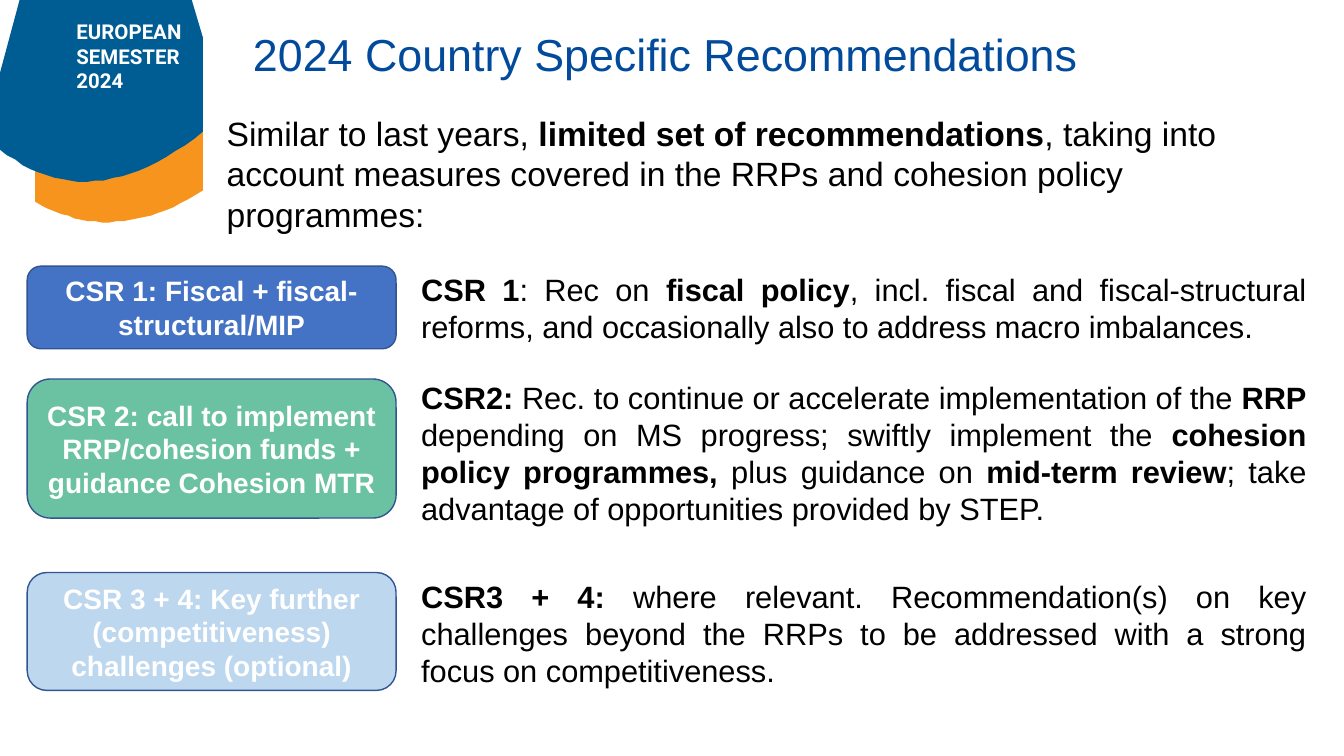
from dataclasses import dataclass

from pptx import Presentation
from pptx.dml.color import RGBColor
from pptx.enum.shapes import MSO_SHAPE
from pptx.enum.text import MSO_ANCHOR, MSO_AUTO_SIZE, PP_ALIGN
from pptx.slide import Slide
from pptx.text.text import _Paragraph
from pptx.util import Pt

Point = tuple[float, float]


@dataclass(frozen=True)
class Theme:
    black: str = "000000"
    white: str = "FFFFFF"
    title_blue: str = "024B9C"
    banner_blue: str = "005D94"
    banner_orange: str = "F7941D"
    outline: str = "325491"
    font: str = "Arial"
    banner_font: str = "Roboto"
    title_size: float = 32
    intro_size: float = 24
    detail_size: float = 22
    label_size: float = 20
    banner_size: float = 14.6


@dataclass(frozen=True)
class Style:
    size: float
    color: str
    font: str = Theme.font


@dataclass(frozen=True)
class Span:
    text: str
    bold: bool = False


@dataclass(frozen=True)
class Banner:
    """Straight-edged outline closed by a curved lower edge."""
    color: str
    upper_edge: list[Point]
    curve: tuple[Point, Point, Point]


@dataclass(frozen=True)
class Recommendation:
    label: str
    fill: str
    label_top: float
    label_height: float
    detail_top: float
    detail: list[Span]


THEME = Theme()
LABEL_LEFT, LABEL_WIDTH = 19.44, 263.52
DETAIL_LEFT, DETAIL_WIDTH, DETAIL_HEIGHT = 293.76, 646.56, 65.52
CURVE_STEPS = 24

BANNERS = [
    Banner(THEME.banner_orange,
           [(145.44, 95), (138.2, 77.8), (36.7, 77.8), (25.2, 110.2)],
           ((25.2, 144), (80.3, 176.7), (145.44, 136.1))),
    Banner(THEME.banner_blue,
           [(145.44, 27.4), (136.8, 0), (13.7, 0), (0, 51.8)],
           ((0, 106.6), (64, 158.5), (145.44, 93.6))),
]

INTRO = [
    Span("Similar to last years, "),
    Span("limited set of recommendations", True),
    Span(", taking into account measures covered in the RRPs and cohesion policy programmes:"),
]

RECOMMENDATIONS = [
    Recommendation("CSR 1: Fiscal + fiscal-structural/MIP", "4472C4", 190.08, 59.04, 190.08, [
        Span("CSR 1", True),
        Span(": Rec on "),
        Span("fiscal policy", True),
        Span(", incl. fiscal and fiscal-structural reforms, and occasionally also "
             "to address macro imbalances."),
    ]),
    Recommendation("CSR 2: call to implement RRP/cohesion funds + guidance Cohesion MTR",
                   "6AC2A3", 270.72, 99.36, 267.12, [
        Span("CSR2: ", True),
        Span("Rec. to continue or accelerate implementation of the "),
        Span("RRP", True),
        Span(" depending on MS progress; swiftly implement the "),
        Span("cohesion policy programmes, ", True),
        Span("plus guidance on "),
        Span("mid-term review", True),
        Span("; take advantage of opportunities provided by STEP."),
    ]),
    Recommendation("CSR 3 + 4: Key further (competitiveness) challenges (optional)",
                   "BDD7EE", 408.96, 84.24, 408.96, [
        Span("CSR3 + 4: ", True),
        Span("where relevant. Recommendation(s) on key challenges beyond the RRPs "
             "to be addressed with a strong focus on competitiveness."),
    ]),
]


def rgb(color: str) -> RGBColor:
    return RGBColor.from_string(color)


def write_spans(para: _Paragraph, spans: list[Span], style: Style,
                align: PP_ALIGN = PP_ALIGN.LEFT) -> None:
    para.alignment = align
    for span in spans:
        run = para.add_run()
        run.text = span.text
        run.font.name = style.font
        run.font.size = Pt(style.size)
        run.font.bold = span.bold
        run.font.color.rgb = rgb(style.color)


def add_text(page: Slide, left: float, top: float, width: float, height: float,
             spans: list[Span], style: Style, align: PP_ALIGN = PP_ALIGN.LEFT) -> None:
    box = page.shapes.add_textbox(Pt(left), Pt(top), Pt(width), Pt(height))
    box.text_frame.word_wrap = True
    write_spans(box.text_frame.paragraphs[0], spans, style, align)


def curve_points(start: Point, control: Point, end: Point) -> list[Point]:
    """Sample a quadratic curve from start to end."""
    points = []
    for step in range(CURVE_STEPS + 1):
        t = step / CURVE_STEPS
        x, y = ((1 - t) ** 2 * a + 2 * t * (1 - t) * b + t ** 2 * c
                for a, b, c in zip(start, control, end))
        points.append((x, y))
    return points


def add_banner(page: Slide, banner: Banner) -> None:
    first, *rest = banner.upper_edge + curve_points(*banner.curve)
    builder = page.shapes.build_freeform(*first, scale=Pt(1))
    builder.add_line_segments(rest, close=True)
    shape = builder.convert_to_shape()
    shape.shadow.inherit = False
    shape.fill.solid()
    shape.fill.fore_color.rgb = rgb(banner.color)
    shape.line.fill.background()


def add_title(page: Slide, text: str) -> None:
    title = page.shapes.title
    title.left, title.top, title.width, title.height = Pt(173.52), Pt(15.12), Pt(828), Pt(51.84)
    frame = title.text_frame
    frame.word_wrap = True
    frame.auto_size = MSO_AUTO_SIZE.NONE
    frame.vertical_anchor = MSO_ANCHOR.MIDDLE
    para = frame.paragraphs[0]
    para.line_spacing = 0.9
    write_spans(para, [Span(text)], Style(THEME.title_size, THEME.title_blue))


def add_recommendation(page: Slide, item: Recommendation) -> None:
    label = page.shapes.add_shape(MSO_SHAPE.ROUNDED_RECTANGLE, Pt(LABEL_LEFT), Pt(item.label_top),
                                  Pt(LABEL_WIDTH), Pt(item.label_height))
    label.shadow.inherit = False
    label.fill.solid()
    label.fill.fore_color.rgb = rgb(item.fill)
    label.line.color.rgb = rgb(THEME.outline)
    label.line.width = Pt(1)
    label.text_frame.word_wrap = True
    label.text_frame.vertical_anchor = MSO_ANCHOR.MIDDLE
    write_spans(label.text_frame.paragraphs[0], [Span(item.label, True)],
                Style(THEME.label_size, THEME.white), PP_ALIGN.CENTER)
    add_text(page, DETAIL_LEFT, item.detail_top, DETAIL_WIDTH, DETAIL_HEIGHT, item.detail,
             Style(THEME.detail_size, THEME.black), PP_ALIGN.JUSTIFY)


def main() -> None:
    deck = Presentation()
    deck.slide_width, deck.slide_height = Pt(960), Pt(540)
    page = deck.slides.add_slide(deck.slide_layouts.get_by_name("Title Only"))
    for banner in BANNERS:
        add_banner(page, banner)
    add_text(page, 47.52, 10.08, 97.92, 60.48, [Span("EUROPEAN SEMESTER 2024", True)],
             Style(THEME.banner_size, THEME.white, THEME.banner_font))
    add_title(page, "2024 Country Specific Recommendations")
    add_text(page, 154.8, 77.04, 732.96, 94.32, INTRO, Style(THEME.intro_size, THEME.black))
    for item in RECOMMENDATIONS:
        add_recommendation(page, item)
    deck.save("out.pptx")


if __name__ == "__main__":
    main()
